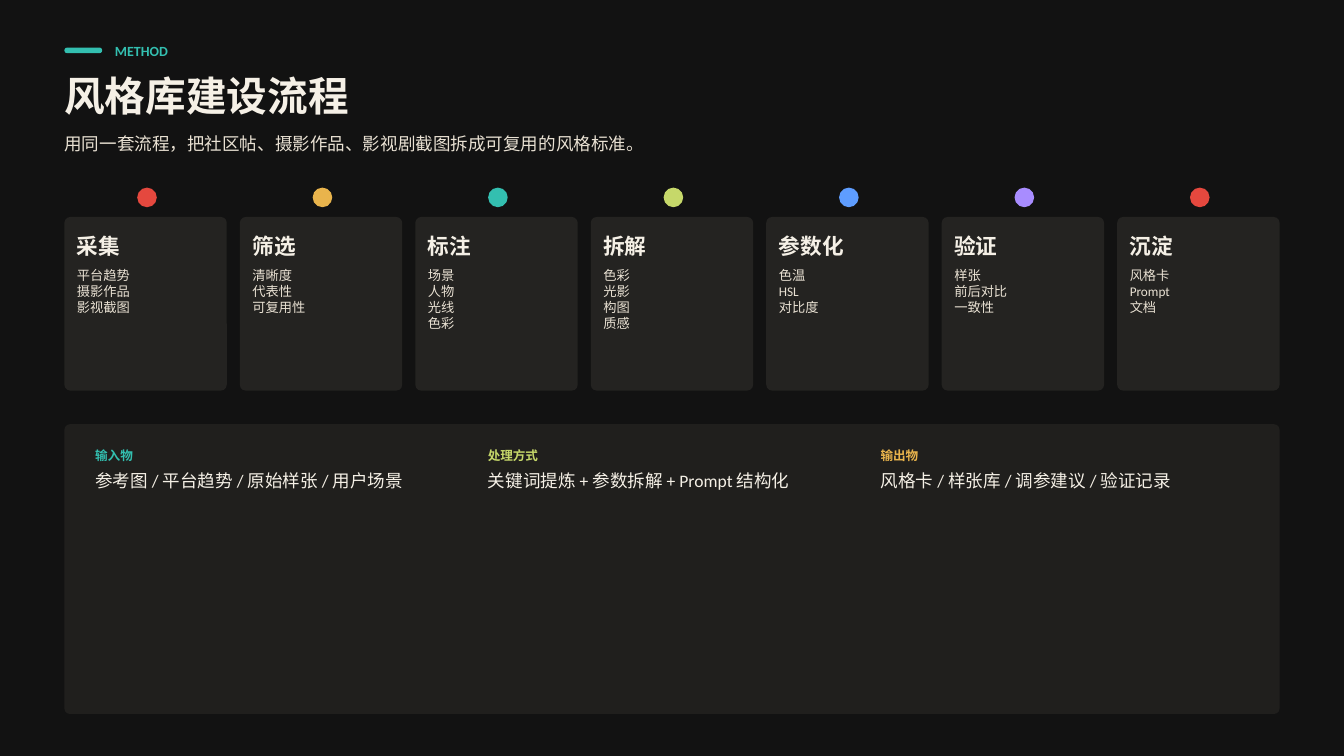
import pptx
import pptx.util
import pptx.dml.color
import pptx.enum.shapes

COLUMNS, ROWS = 960, 540
UNIT = pptx.util.Inches(20) / COLUMNS
FONT = "Calibri"
INK, CREAM, SAND, CARD, PANEL = "121212", "F5F0E6", "E9E1D3", "242321", "201F1D"
RED, AMBER, TEAL, LIME, BLUE, VIOLET = "E5483E", "E9B44C", "33BFB0", "C6D86A", "5E9DFF", "A88CFF"
MARGIN, WIDTH = 46, 868

STEPS = [
    ("采集", RED, ["平台趋势", "摄影作品", "影视截图"]),
    ("筛选", AMBER, ["清晰度", "代表性", "可复用性"]),
    ("标注", TEAL, ["场景", "人物", "光线", "色彩"]),
    ("拆解", LIME, ["色彩", "光影", "构图", "质感"]),
    ("参数化", BLUE, ["色温", "HSL", "对比度"]),
    ("验证", VIOLET, ["样张", "前后对比", "一致性"]),
    ("沉淀", RED, ["风格卡", "Prompt", "文档"]),
]
STAGES = [
    ("输入物", TEAL, "参考图 / 平台趋势 / 原始样张 / 用户场景"),
    ("处理方式", LIME, "关键词提炼 + 参数拆解 + Prompt 结构化"),
    ("输出物", AMBER, "风格卡 / 样张库 / 调参建议 / 验证记录"),
]


def color(value):
    """Turn a hex string into a colour."""
    return pptx.dml.color.RGBColor.from_string(value)


def place(box):
    """Turn a box in grid columns and rows into slide lengths."""
    return [round(length * UNIT) for length in box]


def add_block(page, box, fill, radius=0):
    """Draw a plain filled block with corners of the given radius."""
    kinds = pptx.enum.shapes.MSO_SHAPE
    kind = kinds.ROUNDED_RECTANGLE if radius else kinds.RECTANGLE
    shape = page.shapes.add_shape(kind, *place(box))
    if radius:
        shape.adjustments[0] = radius / min(box[2:])
    shape.shadow.inherit = False
    shape.fill.solid()
    shape.fill.fore_color.rgb = color(fill)
    shape.line.fill.background()


def add_text(page, box, lines, size, ink, bold=False):
    """Write lines as paragraphs in a box without insets."""
    frame = page.shapes.add_textbox(*place(box)).text_frame
    frame.word_wrap = True
    frame.margin_left = frame.margin_top = frame.margin_right = frame.margin_bottom = 0
    frame.text = "\n".join(lines)
    for para in frame.paragraphs:
        for span in para.runs:
            span.font.name = FONT
            span.font.size = pptx.util.Pt(size)
            span.font.bold = bold
            span.font.color.rgb = color(ink)


def add_header(page, box):
    """Place the section tag, title and subtitle."""
    left, top, width, height = box
    add_block(page, (left, top + 4, 27, 4), TEAL, 2)
    add_text(page, (left + 36, top, 210, 12), ["METHOD"], 15, TEAL, True)
    add_text(page, (left, top + 21, width, 35), ["风格库建设流程"], 43.5, CREAM, True)
    subtitle = "用同一套流程，把社区帖、摄影作品、影视剧截图拆成可复用的风格标准。"
    add_text(page, (left, top + 65, width, 15), [subtitle], 18.8, SAND)


def add_step(page, box, name, accent, items):
    """Place one step: a dot above a card with a name and items."""
    left, top, width, height = box
    inner = width - 18
    add_block(page, (left + 52, top - 21, 14, 14), accent, 7)
    add_block(page, box, CARD, 4.2)
    add_text(page, (left + 9, top + 11, inner, 19), [name], 23.2, CREAM, True)
    add_text(page, (left + 9, top + 36, inner, 11.6 * len(items)), items, 14.2, SAND)


def add_steps(page, box):
    """Spread the step cards evenly over the box."""
    left, top, width, height = box
    card = 116
    pitch = (width - card) / (len(STEPS) - 1)
    for index, step in enumerate(STEPS):
        add_step(page, (left + index * pitch, top, card, height), *step)


def add_stages(page, box):
    """Place the panel with its evenly spread stage columns."""
    left, top, width, height = box
    add_block(page, box, PANEL, 4)
    pad, column = 22, 263
    pitch = (width - 2 * pad - column) / (len(STAGES) - 1)
    for index, (label, accent, text) in enumerate(STAGES):
        start = left + pad + index * pitch
        add_text(page, (start, top + 17, column, 11), [label], 13.5, accent, True)
        add_text(page, (start, top + 33, column, 15), [text], 18.8, CREAM)


def main():
    """Build the slide and save the deck."""
    deck = pptx.Presentation()
    deck.slide_width, deck.slide_height = place((COLUMNS, ROWS))
    page = deck.slides.add_slide(deck.slide_layouts[6])
    add_block(page, (0, 0, COLUMNS, ROWS), INK)
    add_header(page, (MARGIN, 30, WIDTH, 80))
    add_steps(page, (MARGIN, 155, WIDTH, 124))
    add_stages(page, (MARGIN, 303, WIDTH, 207))
    deck.save("out.pptx")


if __name__ == "__main__":
    main()
